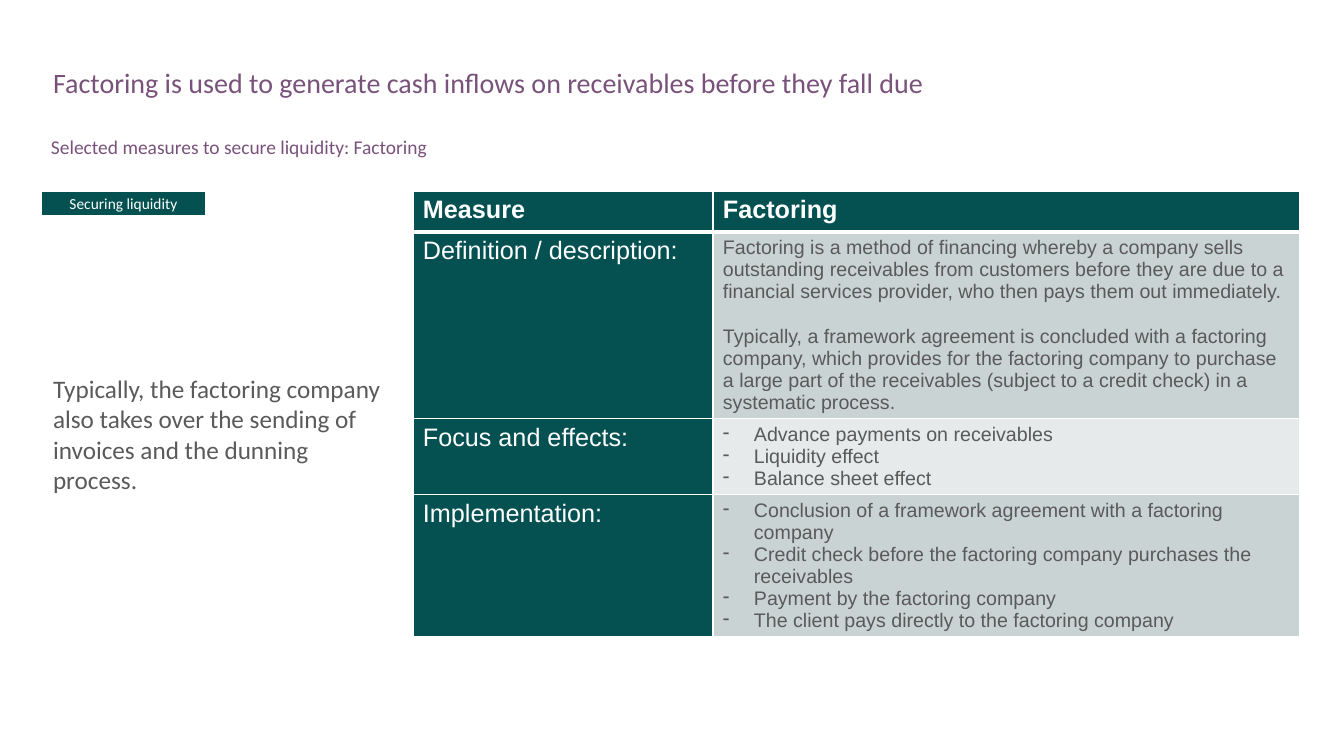
from lxml import etree
from pptx import Presentation
from pptx.dml.color import RGBColor
from pptx.enum.shapes import MSO_SHAPE
from pptx.enum.text import MSO_ANCHOR, MSO_AUTO_SIZE, PP_ALIGN
from pptx.oxml.ns import qn
from pptx.util import Pt

TOP, MIDDLE = MSO_ANCHOR.TOP, MSO_ANCHOR.MIDDLE
LEFT, CENTER = PP_ALIGN.LEFT, PP_ALIGN.CENTER
NO_AUTOFIT = MSO_AUTO_SIZE.NONE
RECTANGLE = MSO_SHAPE.RECTANGLE

COLORS = {
    "white": "FFFFFF",
    "teal": "055152",
    "purple": "79527B",
    "text": "595A59",
    "dark band": "CAD3D4",
    "light band": "E6EAEA",
}

TITLE = "Factoring is used to generate cash inflows on receivables before they fall due"
SUBTITLE = "Selected measures to secure liquidity: Factoring"
NOTE = ("Typically, the factoring company also takes over the sending of invoices "
        "and the dunning process.")
TAG = "Securing liquidity"
HEADER = ("Measure", "Factoring")
MEASURES = [
    ("Definition / description:", False, [
        "Factoring is a method of financing whereby a company sells outstanding "
        "receivables from customers before they are due to a financial services "
        "provider, who then pays them out immediately.",
        "Typically, a framework agreement is concluded with a factoring company, "
        "which provides for the factoring company to purchase a large part of the "
        "receivables (subject to a credit check) in a systematic process.",
    ]),
    ("Focus and effects:", True, [
        "Advance payments on receivables",
        "Liquidity effect",
        "Balance sheet effect",
    ]),
    ("Implementation:", True, [
        "Conclusion of a framework agreement with a factoring company",
        "Credit check before the factoring company purchases the receivables",
        "Payment by the factoring company",
        "The client pays directly to the factoring company",
    ]),
]

PAGE_SIZE = (1344, 756)
TITLE_BOX = (43, 64, 1264, 65)
SUBTITLE_BOX = (41, 136, 1266, 28)
NOTE_BOX = (43, 180, 352, 508)
TAG_BOX = (41, 191, 165, 25)
TABLE_ORIGIN = (413, 191)
COLUMN_WIDTHS = (300, 587)
ROW_HEIGHTS = (41, 186, 76, 142)
BULLET_INDENT = 31
INSETS = (10, 5, 10, 5)


def px(length):
    return round(length * 914400 / 100.8)


def color(name):
    return RGBColor.from_string(COLORS[name])


def style(para, size, ink, font="Calibri", bold=False, align=LEFT, spacing=1.0, before=0):
    para.alignment = align
    para.line_spacing = spacing
    para.space_before = Pt(before)
    for span in para.runs:
        span.font.name = font
        span.font.size = Pt(size)
        span.font.bold = bold
        span.font.color.rgb = color(ink)


def set_frame(box, text, anchor):
    frame = box.text_frame
    frame.text = text
    frame.word_wrap = True
    frame.auto_size = NO_AUTOFIT
    frame.vertical_anchor = anchor
    (frame.margin_left, frame.margin_top,
     frame.margin_right, frame.margin_bottom) = map(px, INSETS)
    return frame.paragraphs[0]


def fill_placeholder(box, place, text, size, ink, anchor=TOP, spacing=1.0):
    box.left, box.top, box.width, box.height = map(px, place)
    para = set_frame(box, text, anchor)
    properties = para._p.get_or_add_pPr()
    properties.set("marL", "0")
    properties.set("indent", "0")
    etree.SubElement(properties, qn("a:buNone"))
    style(para, size, ink, spacing=spacing)


def add_dash(para):
    properties = para._p.get_or_add_pPr()
    properties.set("marL", str(px(BULLET_INDENT)))
    properties.set("indent", str(-px(BULLET_INDENT)))
    bullet_color = etree.SubElement(properties, qn("a:buClr"))
    etree.SubElement(bullet_color, qn("a:srgbClr"), val=COLORS["text"])
    etree.SubElement(properties, qn("a:buChar"), char="-")


def paint_cell(cell, row, fill):
    widths = {"lnL": 1, "lnR": 1, "lnT": 3 if row == 1 else 1, "lnB": 3 if row == 0 else 1}
    for edge, width in widths.items():
        line = etree.SubElement(cell._tc.get_or_add_tcPr(), qn("a:" + edge), w=str(Pt(width)))
        solid = etree.SubElement(line, qn("a:solidFill"))
        etree.SubElement(solid, qn("a:srgbClr"), val=COLORS["white"])
    cell.fill.solid()
    cell.fill.fore_color.rgb = color(fill)
    (cell.margin_left, cell.margin_top,
     cell.margin_right, cell.margin_bottom) = map(px, INSETS)


def add_label(cell, row, text, bold=False):
    paint_cell(cell, row, "teal")
    cell.text_frame.text = text
    style(cell.text_frame.paragraphs[0], 18, "white", "Arial", bold)


def add_details(cell, row, lines, bulleted):
    paint_cell(cell, row, "dark band" if row % 2 else "light band")
    cell.text_frame.text = "\n".join(lines)
    for index, para in enumerate(cell.text_frame.paragraphs):
        if bulleted:
            add_dash(para)
        gap = 16 if index and not bulleted else 0
        style(para, 14, "text", "Arial", before=gap)


def add_measures(page):
    size = (sum(COLUMN_WIDTHS), sum(ROW_HEIGHTS))
    frame = page.shapes.add_table(len(ROW_HEIGHTS), len(COLUMN_WIDTHS),
                                  *map(px, TABLE_ORIGIN + size))
    table = frame.table
    for column, width in zip(table.columns, COLUMN_WIDTHS):
        column.width = px(width)
    for row, height in zip(table.rows, ROW_HEIGHTS):
        row.height = px(height)
    for column, heading in enumerate(HEADER):
        add_label(table.cell(0, column), 0, heading, bold=True)
    for row, (label, bulleted, lines) in enumerate(MEASURES, 1):
        add_label(table.cell(row, 0), row, label)
        add_details(table.cell(row, 1), row, lines, bulleted)


def add_tag(page):
    tag = page.shapes.add_shape(RECTANGLE, *map(px, TAG_BOX))
    tag.shadow.inherit = False
    tag.fill.solid()
    tag.fill.fore_color.rgb = color("teal")
    tag.line.color.rgb = color("white")
    tag.line.width = Pt(1)
    style(set_frame(tag, TAG, MIDDLE), 11, "white", align=CENTER)


def main():
    deck = Presentation()
    deck.slide_width, deck.slide_height = map(px, PAGE_SIZE)
    page = deck.slides.add_slide(deck.slide_layouts.get_by_name("Two Content"))
    title, note, subtitle = page.placeholders
    fill_placeholder(note, NOTE_BOX, NOTE, 18, "text", anchor=MIDDLE)
    fill_placeholder(title, TITLE_BOX, TITLE, 20, "purple", spacing=0.9)
    fill_placeholder(subtitle, SUBTITLE_BOX, SUBTITLE, 13.9, "purple", spacing=0.7)
    add_measures(page)
    add_tag(page)
    deck.save("out.pptx")


if __name__ == "__main__":
    main()
